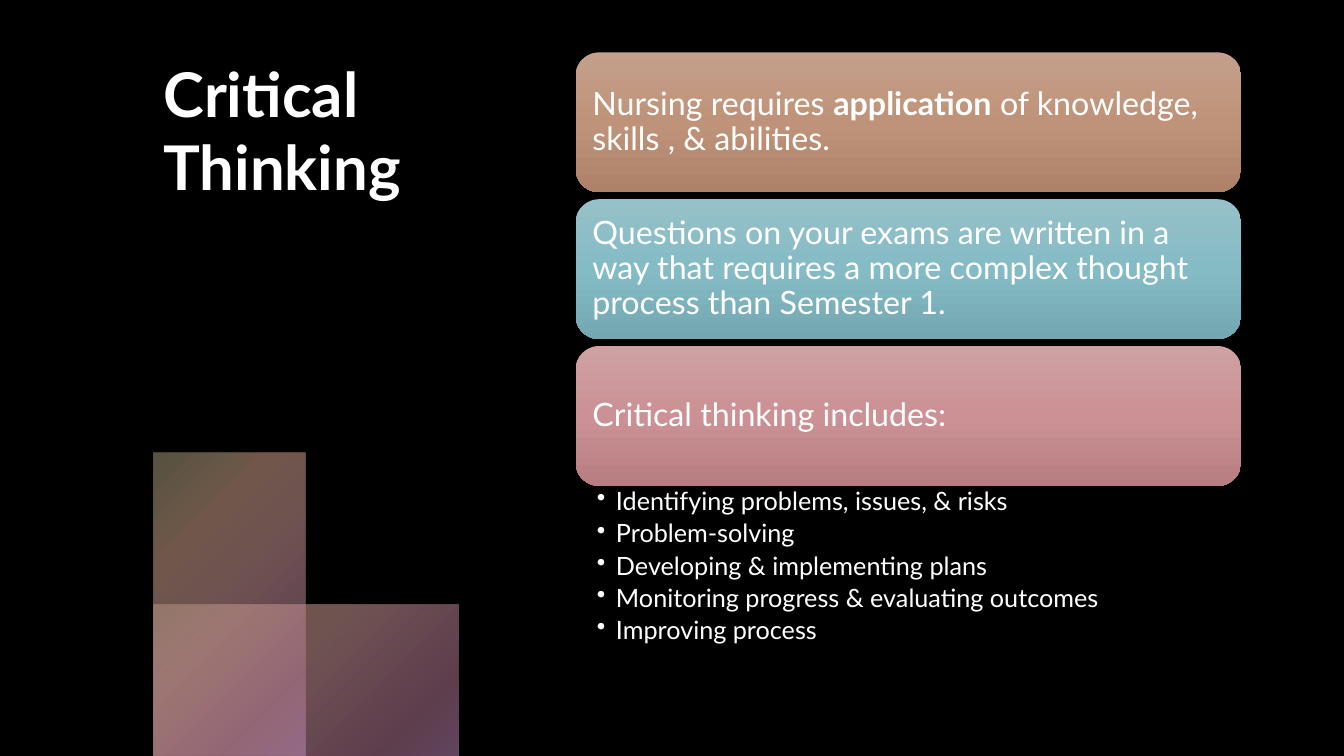
import lxml.etree
import pptx
import pptx.dml.color
import pptx.enum.shapes
import pptx.enum.text
import pptx.oxml.ns
import pptx.util

Inches = pptx.util.Inches
Pt = pptx.util.Pt
RGBColor = pptx.dml.color.RGBColor
SHAPES = pptx.enum.shapes.MSO_SHAPE
ANCHOR = pptx.enum.text.MSO_ANCHOR
ALIGN = pptx.enum.text.PP_ALIGN
qn = pptx.oxml.ns.qn

FONT = "Lato"
BLACK = RGBColor(0x00, 0x00, 0x00)
WHITE = RGBColor(0xFF, 0xFF, 0xFF)

# Gradient stops: position in percent, colour, opacity in percent
DECOR_STOPS = [
    (0, RGBColor(0xAA, 0xA1, 0x7E), 50),
    (25, RGBColor(0xBC, 0x94, 0x7C), 60),
    (50, RGBColor(0xC8, 0x94, 0x97), 55),
    (81, RGBColor(0xBC, 0x7C, 0x9A), 50),
    (99, RGBColor(0xC5, 0x8E, 0xBF), 50),
]
TAN = [(0, RGBColor(0xC4, 0xA0, 0x8C), 100),
       (50, RGBColor(0xBF, 0x93, 0x79), 100),
       (100, RGBColor(0xAE, 0x82, 0x68), 100)]
TEAL = [(0, RGBColor(0x96, 0xC1, 0xC9), 100),
        (50, RGBColor(0x85, 0xBB, 0xC5), 100),
        (100, RGBColor(0x73, 0xA8, 0xB2), 100)]
ROSE = [(0, RGBColor(0xCF, 0xA1, 0xA3), 100),
        (50, RGBColor(0xCB, 0x91, 0x95), 100),
        (100, RGBColor(0xB7, 0x7E, 0x81), 100)]

# Each card: gradient, then runs of (text, bold)
CARDS = [
    (TAN, [("Nursing requires ", False), ("application", True),
           (" of knowledge, skills , & abilities.", False)]),
    (TEAL, [("Questions on your exams are written in a way that requires "
             "a more complex thought process than Semester 1.", False)]),
    (ROSE, [("Critical thinking includes:", False)]),
]
SKILLS = [
    "Identifying problems, issues, & risks",
    "Problem-solving",
    "Developing & implementing plans",
    "Monitoring progress & evaluating outcomes",
    "Improving process",
]


def add_run(paragraph, text, size, bold=False):
    run = paragraph.add_run()
    run.text = text
    run.font.name = FONT
    run.font.size = Pt(size)
    run.font.bold = bold
    run.font.color.rgb = WHITE


def set_insets(frame, left, top, right, bottom):
    frame.margin_left, frame.margin_top = Inches(left), Inches(top)
    frame.margin_right, frame.margin_bottom = Inches(right), Inches(bottom)


def fill_gradient(shape, stops, radial=False):
    """Run the stops from top to bottom, or outwards from the top left corner."""
    shape.fill.gradient()
    gradient = shape.fill._xPr.find(qn("a:gradFill"))
    for child in list(gradient):
        gradient.remove(child)
    add = lxml.etree.SubElement
    stop_list = add(gradient, qn("a:gsLst"))
    for position, colour, opacity in stops:
        stop = add(stop_list, qn("a:gs"), pos=str(position * 1000))
        tint = add(stop, qn("a:srgbClr"), val=str(colour))
        if opacity < 100:
            add(tint, qn("a:alpha"), val=str(opacity * 1000))
    if radial:
        circle = add(gradient, qn("a:path"), path="circle")
        add(circle, qn("a:fillToRect"), r="100000", b="100000")
    else:
        add(gradient, qn("a:lin"), ang="5400000", scaled="0")


def add_gradient_shape(slide, kind, left, top, width, height, stops, radial=False):
    shape = slide.shapes.add_shape(
        kind, Inches(left), Inches(top), Inches(width), Inches(height))
    shape.shadow.inherit = False
    shape.line.fill.background()
    fill_gradient(shape, stops, radial)
    return shape


def add_corner_blocks(slide, left, top, width, height):
    """Two translucent bars that overlap in the lower left quarter."""
    for x, y, w, h in ((left, top + height / 2, width, height / 2),
                       (left, top, width / 2, height)):
        add_gradient_shape(slide, SHAPES.RECTANGLE, x, y, w, h, DECOR_STOPS, radial=True)


def add_title(slide, left, top, width, height):
    title = slide.shapes.title
    title.left, title.top = Inches(left), Inches(top)
    title.width, title.height = Inches(width), Inches(height)
    frame = title.text_frame
    frame.word_wrap = True
    frame.auto_size = pptx.enum.text.MSO_AUTO_SIZE.NONE
    frame.vertical_anchor = ANCHOR.TOP
    frame.paragraphs[0].alignment = ALIGN.LEFT
    add_run(frame.paragraphs[0], "Critical Thinking", 44, bold=True)


def add_cards(slide, left, top, width, height, gap=0.07):
    card_height = (height - gap * (len(CARDS) - 1)) / len(CARDS)
    for index, (stops, runs) in enumerate(CARDS):
        card = add_gradient_shape(
            slide, SHAPES.ROUNDED_RECTANGLE, left,
            top + index * (card_height + gap), width, card_height, stops)
        frame = card.text_frame
        frame.word_wrap = True
        frame.vertical_anchor = ANCHOR.MIDDLE
        set_insets(frame, 0.1, 0.1, 0.1, 0.1)
        statement = frame.paragraphs[0]
        statement.alignment = ALIGN.LEFT
        statement.line_spacing = 0.9
        for text, bold in runs:
            add_run(statement, text, 23, bold)


def add_skill_list(slide, left, top, width, height):
    box = slide.shapes.add_textbox(
        Inches(left), Inches(top), Inches(width), Inches(height))
    frame = box.text_frame
    frame.word_wrap = True
    set_insets(frame, 0.21, 0.03, 0.18, 0.03)
    for index, skill in enumerate(SKILLS):
        item = frame.paragraphs[0] if index == 0 else frame.add_paragraph()
        item.level = 1
        item.line_spacing = 0.9
        item.space_after = Pt(3.6)
        add_run(item, skill, 18)
        # Hanging bullet
        properties = item._p.get_or_add_pPr()
        properties.set("marL", str(Inches(0.19)))
        properties.set("indent", str(-Inches(0.19)))
        lxml.etree.SubElement(properties, qn("a:buChar"), char="•")


def main():
    deck = pptx.Presentation()
    deck.slide_width, deck.slide_height = Inches(13.33), Inches(7.5)
    slide = deck.slides.add_slide(deck.slide_layouts[5])
    slide.background.fill.solid()
    slide.background.fill.fore_color.rgb = BLACK

    # Left: title and corner decoration
    add_corner_blocks(slide, 1.52, 4.49, 3.03, 3.01)
    add_title(slide, 1.52, 0.5, 3.48, 3.71)

    # Right: statement cards and the list under the last one
    add_cards(slide, 5.71, 0.52, 6.6, 4.3)
    add_skill_list(slide, 5.71, 4.82, 6.6, 1.72)

    deck.save("out.pptx")


if __name__ == "__main__":
    main()
